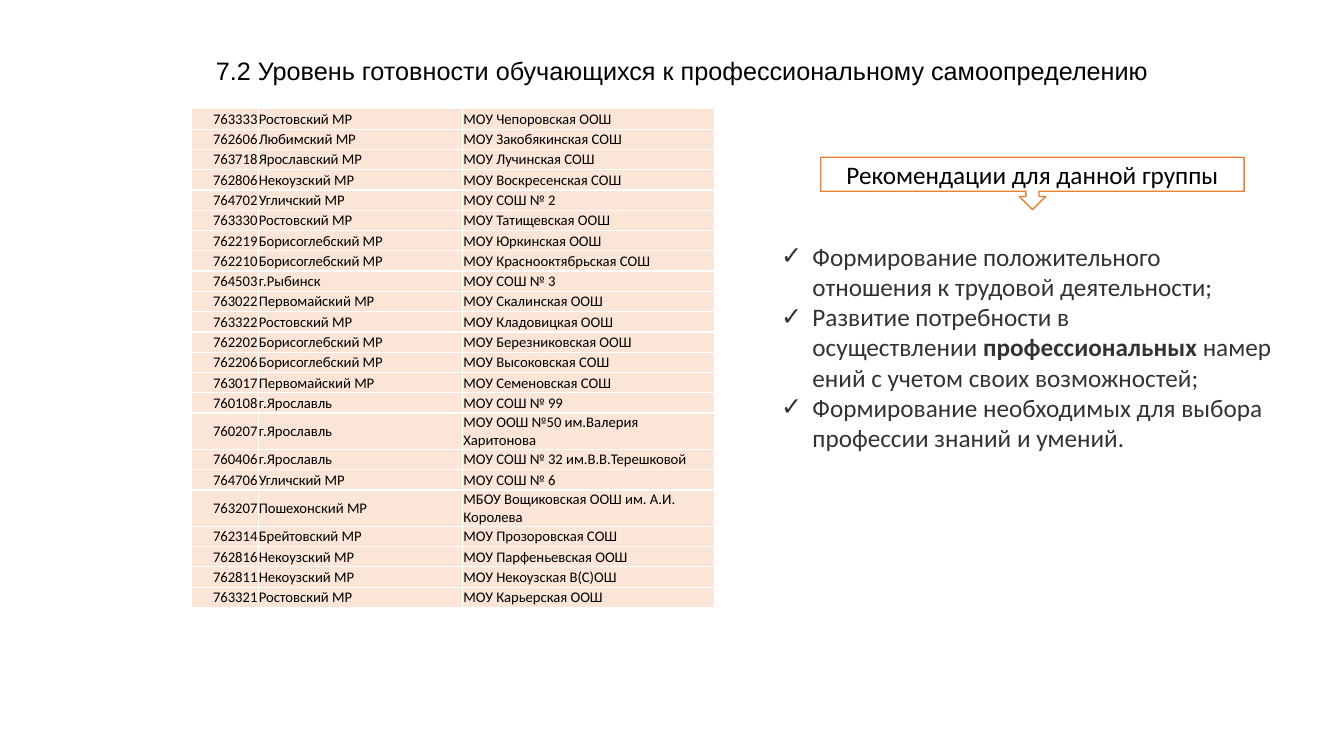
from lxml.etree import SubElement
from pptx import Presentation
from pptx.dml.color import RGBColor
from pptx.enum.shapes import MSO_SHAPE
from pptx.enum.text import MSO_ANCHOR, PP_ALIGN
from pptx.oxml.ns import qn
from pptx.util import Inches, Pt

COLORS = {
    "white": "FFFFFF",
    "black": "000000",
    "body": "333333",
    "accent": "ED7D31",
    "cell": "FBE5D6",
}
TITLE_FONT = {"name": "Arial", "size": Pt(18), "bold": False}
CALLOUT_FONT = {"name": "Calibri", "size": Pt(18)}
ADVICE_FONT = {"name": "Calibri", "size": Pt(18)}
CELL_FONT = {"name": "Calibri", "size": Pt(10.5), "bold": False}
CELL_INSET = Inches(0.5 / 72)
CELL_FORMAT = {
    "margin_left": CELL_INSET,
    "margin_top": CELL_INSET,
    "margin_right": CELL_INSET,
    "margin_bottom": 0,
    "vertical_anchor": MSO_ANCHOR.MIDDLE,
}

NBSP = chr(160)
COLUMN_WIDTHS = (0.66, 2.03, 2.5)
ROW_HEIGHT = 14.5 / 72
SCHOOLS = [
    ("763333", "Ростовский МР", "МОУ Чепоровская ООШ"),
    ("762606", "Любимский МР", "МОУ Закобякинская СОШ"),
    ("763718", "Ярославский МР", "МОУ Лучинская СОШ"),
    ("762806", "Некоузский МР", "МОУ Воскресенская СОШ"),
    ("764702", "Угличский МР", "МОУ СОШ № 2"),
    ("763330", "Ростовский МР", "МОУ Татищевская ООШ"),
    ("762219", "Борисоглебский МР", "МОУ Юркинская ООШ"),
    ("762210", "Борисоглебский МР", "МОУ Краснооктябрьская СОШ"),
    ("764503", "г.Рыбинск", "МОУ СОШ № 3"),
    ("763022", "Первомайский МР", "МОУ Скалинская ООШ"),
    ("763322", "Ростовский МР", "МОУ Кладовицкая ООШ"),
    ("762202", "Борисоглебский МР", "МОУ Березниковская ООШ"),
    ("762206", "Борисоглебский МР", "МОУ Высоковская СОШ"),
    ("763017", "Первомайский МР", "МОУ Семеновская СОШ"),
    ("760108", "г.Ярославль", "МОУ СОШ № 99"),
    ("760207", "г.Ярославль", "МОУ ООШ №50 им.Валерия Харитонова"),
    ("760406", "г.Ярославль", "МОУ СОШ № 32 им.В.В.Терешковой"),
    ("764706", "Угличский МР", "МОУ СОШ № 6"),
    ("763207", "Пошехонский МР", "МБОУ Вощиковская ООШ им. А.И. Королева"),
    ("762314", "Брейтовский МР", "МОУ Прозоровская СОШ"),
    ("762816", "Некоузский МР", "МОУ Парфеньевская ООШ"),
    ("762811", "Некоузский МР", "МОУ Некоузская В(С)ОШ"),
    ("763321", "Ростовский МР", "МОУ Карьерская ООШ"),
]
# Each recommendation is a list of (text, bold) runs
RECOMMENDATIONS = [
    [("Формирование положительного отношения к трудовой деятельности;", False)],
    [
        ("Развитие потребности в осуществлении" + NBSP, False),
        ("профессиональных", True),
        (NBSP + "намерений с учетом своих возможностей;", False),
    ],
    [("Формирование необходимых для выбора профессии знаний и умений.", False)],
]


def rgb(color):
    return RGBColor.from_string(COLORS[color])


def apply_format(target, values):
    for name, value in values.items():
        setattr(target, name, value)


def format_font(font, values, color):
    apply_format(font, values)
    font.color.rgb = rgb(color)


def place_title(slide, text):
    title = slide.shapes.title
    apply_format(title, {"left": Inches(2.04), "top": Inches(0.5),
                         "width": Inches(9.54), "height": Inches(0.4)})
    frame = title.text_frame
    frame.text = text
    apply_format(frame, {"word_wrap": True, "vertical_anchor": MSO_ANCHOR.TOP})
    heading = frame.paragraphs[0]
    heading.alignment = PP_ALIGN.LEFT
    format_font(heading.runs[0].font, TITLE_FONT, "black")


def add_callout(slide, text):
    callout = slide.shapes.add_shape(
        MSO_SHAPE.DOWN_ARROW_CALLOUT,
        Inches(8.14), Inches(1.56), Inches(4.2), Inches(0.52))
    callout.shadow.inherit = False
    callout.fill.solid()
    callout.fill.fore_color.rgb = rgb("white")
    callout.line.color.rgb = rgb("accent")
    callout.line.width = Pt(1)
    frame = callout.text_frame
    frame.text = text
    frame.vertical_anchor = MSO_ANCHOR.MIDDLE
    label = frame.paragraphs[0]
    label.alignment = PP_ALIGN.CENTER
    format_font(label.runs[0].font, CALLOUT_FONT, "black")


def add_borders(cell):
    properties = cell._tc.get_or_add_tcPr()
    for side in ("lnL", "lnR", "lnT", "lnB"):
        border = SubElement(properties, qn(f"a:{side}"), w=str(Pt(1)))
        fill = SubElement(border, qn("a:solidFill"))
        SubElement(fill, qn("a:srgbClr"), val=COLORS["white"])


def fill_cell(cell, text, alignment):
    apply_format(cell, CELL_FORMAT)
    add_borders(cell)
    cell.fill.solid()
    cell.fill.fore_color.rgb = rgb("cell")
    cell.text = text
    entry = cell.text_frame.paragraphs[0]
    entry.alignment = alignment
    format_font(entry.runs[0].font, CELL_FONT, "black")


def add_school_table(slide):
    schools = slide.shapes.add_table(
        len(SCHOOLS), len(COLUMN_WIDTHS), Inches(1.9), Inches(1.08),
        Inches(sum(COLUMN_WIDTHS)), Inches(ROW_HEIGHT * len(SCHOOLS))).table
    apply_format(schools, {"first_row": False, "horz_banding": False})
    for column, width in zip(schools.columns, COLUMN_WIDTHS):
        column.width = Inches(width)
    for row, school in zip(schools.rows, SCHOOLS):
        row.height = Inches(ROW_HEIGHT)
        for index, text in enumerate(school):
            fill_cell(row.cells[index], text,
                      PP_ALIGN.LEFT if index else PP_ALIGN.RIGHT)


def add_check_mark(paragraph):
    properties = paragraph._p.get_or_add_pPr()
    indent = Inches(0.31)
    properties.set("marL", str(indent))
    properties.set("indent", str(-indent))
    SubElement(properties, qn("a:buFont"), typeface="Arial")
    SubElement(properties, qn("a:buChar"), char="✓")


def add_recommendations(slide):
    advice = slide.shapes.add_textbox(
        Inches(7.65), Inches(2.34), Inches(5.18), Inches(2.22))
    frame = advice.text_frame
    frame.word_wrap = True
    for index, parts in enumerate(RECOMMENDATIONS):
        item = frame.add_paragraph() if index else frame.paragraphs[0]
        add_check_mark(item)
        format_font(item.font, ADVICE_FONT, "body")
        for text, bold in parts:
            run = item.add_run()
            run.text = text
            format_font(run.font, {**ADVICE_FONT, "bold": bold}, "body")


def main():
    deck = Presentation()
    deck.slide_width = Inches(13.33)
    deck.slide_height = Inches(7.5)
    slide = deck.slides.add_slide(deck.slide_layouts.get_by_name("Title Only"))

    # Heading
    place_title(slide, "7.2 Уровень готовности обучающихся "
                       "к профессиональному самоопределению")

    # Schools in this group
    add_school_table(slide)

    # Advice for the group
    add_callout(slide, "Рекомендации для данной группы")
    add_recommendations(slide)

    deck.save("out.pptx")


if __name__ == "__main__":
    main()
